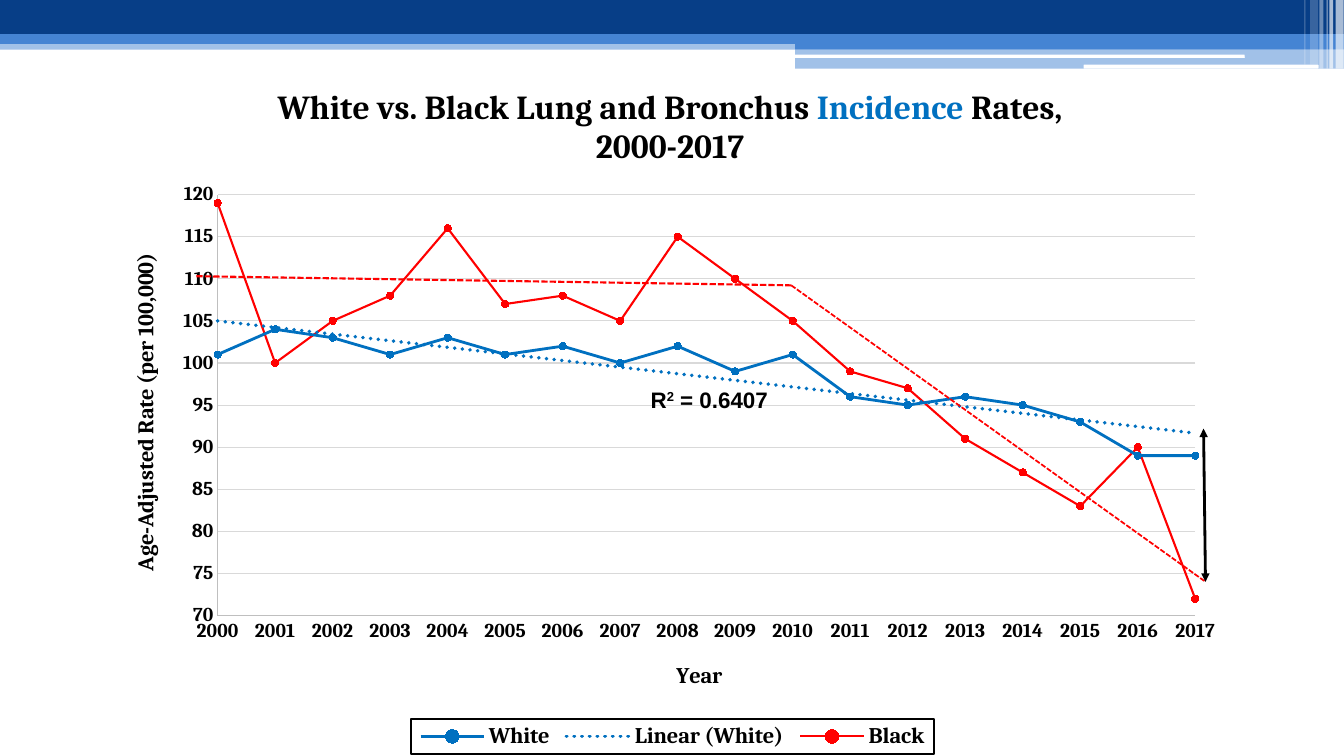
from dataclasses import dataclass

from lxml.etree import SubElement
from pptx import Presentation
from pptx.chart.data import XyChartData
from pptx.dml.color import RGBColor
from pptx.enum.chart import XL_CHART_TYPE, XL_LEGEND_POSITION, XL_MARKER_STYLE, XL_TICK_MARK
from pptx.enum.dml import MSO_LINE
from pptx.enum.shapes import MSO_CONNECTOR, MSO_SHAPE
from pptx.oxml import parse_xml
from pptx.oxml.ns import nsdecls, qn
from pptx.util import Cm, Pt


@dataclass(frozen=True)
class Theme:
    navy: RGBColor = RGBColor.from_string("073E87")
    band: RGBColor = RGBColor.from_string("4584D3")
    paper: RGBColor = RGBColor.from_string("FFFFFF")
    ink: RGBColor = RGBColor.from_string("000000")
    blue: RGBColor = RGBColor.from_string("0070C0")
    red: RGBColor = RGBColor.from_string("FF0000")
    axis: RGBColor = RGBColor.from_string("BFBFBF")
    grid: RGBColor = RGBColor.from_string("D9D9D9")
    font: str = "Cambria"
    label_font: str = "Arial"
    title: int = 24
    label: int = 16
    tick: int = 14


theme = Theme()


def style(font, size, color=theme.ink, name=theme.font):
    font.name, font.size, font.bold = name, Pt(size), True
    font.color.rgb = color


def place(el, after, **box):
    """Fix a chart part at fractions of the chart's size."""
    for old in el.findall(qn("c:layout")):
        el.remove(old)
    modes = "".join(f'<c:{k}Mode val="edge"/>' for k in "xy")
    if after is None:
        modes = '<c:layoutTarget val="inner"/>' + modes
    values = "".join(f'<c:{k} val="{v}"/>' for k, v in box.items())
    layout = parse_xml(f'<c:layout {nsdecls("c")}><c:manualLayout>{modes}{values}'
                       '</c:manualLayout></c:layout>')
    if after is None:
        el.insert(0, layout)
    else:
        el.find(qn(after)).addnext(layout)


prs = Presentation()
prs.slide_width, prs.slide_height = Cm(33.87), Cm(19.05)
s = prs.slides.add_slide(prs.slide_layouts[6])

# Header bands: left, top, width, height, colour, opacity in percent
RECT, ROUND = MSO_SHAPE.RECTANGLE, MSO_SHAPE.ROUNDED_RECTANGLE
bands = [
    (RECT, 0, 1.02, 33.87, 0.23, theme.band, 50),
    (RECT, 0, 0, 33.87, 0.86, theme.navy, 100),
    (RECT, 0, 0.86, 33.87, 0.25, theme.band, 100),
    (RECT, 20.04, 0.99, 13.83, 0.25, theme.band, 100),
    (RECT, 20.04, 1.22, 13.83, 0.51, theme.band, 50),
    (ROUND, 20.02, 1.38, 11.35, 0.08, theme.paper, 100),
    (ROUND, 27.31, 1.63, 5.92, 0.1, theme.paper, 100),
    (RECT, 33.66, 0, 0.2, 1.73, theme.paper, 65),
    (RECT, 33.5, 0, 0.1, 1.73, theme.paper, 65),
    (RECT, 33.43, 0, 0.03, 1.73, theme.paper, 60),
    (RECT, 33.25, 0, 0.1, 1.73, theme.paper, 40),
    (RECT, 33.02, 0, 0.2, 1.63, theme.paper, 20),
    (RECT, 32.87, 0, 0.03, 1.63, theme.paper, 30),
]
for kind, x, y, w, h, color, opacity in bands:
    sp = s.shapes.add_shape(kind, Cm(x), Cm(y), Cm(w), Cm(h))
    sp.shadow.inherit = False
    sp.line.fill.background()
    sp.fill.solid()
    sp.fill.fore_color.rgb = color
    if opacity < 100:
        clr = sp.element.spPr.find(".//" + qn("a:srgbClr"))
        SubElement(clr, qn("a:alpha")).set("val", str(opacity * 1000))

# Incidence chart
rates = {
    "White": [101, 104, 103, 101, 103, 101, 102, 100, 102, 99,
              101, 96, 95, 96, 95, 93, 89, 89],
    "Black": [119, 100, 105, 108, 116, 107, 108, 105, 115, 110,
              105, 99, 97, 91, 87, 83, 90, 72],
}
data = XyChartData()
for name, values in rates.items():
    points = data.add_series(name)
    for year, rate in enumerate(values, 2000):
        points.add_data_point(year, rate)
chart = s.shapes.add_chart(XL_CHART_TYPE.XY_SCATTER_LINES, Cm(2.62), Cm(1.6),
                           Cm(28.65), Cm(17.42), data).chart
chart.font.name = theme.font
plot_area = chart.element.find(".//" + qn("c:plotArea"))
place(plot_area, None, x=0.1, y=0.19, w=0.86, h=0.61)

# Series
for series, color, width in zip(chart.plots[0].series, (theme.blue, theme.red), (2, 1.5)):
    series.smooth = False
    series.format.line.color.rgb = color
    series.format.line.width = Pt(width)
    series.marker.style = XL_MARKER_STYLE.CIRCLE
    series.marker.size = 5
    series.marker.format.fill.solid()
    series.marker.format.fill.fore_color.rgb = color
    series.marker.format.line.color.rgb = color
chart.plots[0].vary_by_categories = False

# Linear trend of the first series
trend = parse_xml(
    f'<c:trendline {nsdecls("c", "a")}><c:spPr><a:ln w="{Pt(2.75)}" cap="rnd"><a:solidFill>'
    f'<a:srgbClr val="{theme.blue}"/></a:solidFill><a:prstDash val="sysDot"/></a:ln></c:spPr>'
    '<c:trendlineType val="linear"/><c:dispRSqr val="0"/><c:dispEq val="0"/></c:trendline>')
plot_area.find(".//" + qn("c:xVal")).addprevious(trend)

# Axes
axes = [
    (chart.category_axis, "Year", 2000, 2017, 1, {"x": 0.5, "y": 0.86}),
    (chart.value_axis, "Age-Adjusted Rate (per 100,000)", 70, 120, 5, {"x": 0.02, "y": 0.27}),
]
for axis, title, low, high, step, spot in axes:
    axis.minimum_scale, axis.maximum_scale, axis.major_unit = low, high, step
    axis.major_tick_mark = axis.minor_tick_mark = XL_TICK_MARK.NONE
    axis.format.line.color.rgb = theme.axis
    axis.format.line.width = Pt(0.75)
    axis.tick_labels.number_format = "General"
    axis.tick_labels.number_format_is_linked = False
    style(axis.tick_labels.font, theme.tick)
    tf = axis.axis_title.text_frame
    tf.text = title
    style(tf.paragraphs[0].runs[0].font, theme.label)
    place(axis.axis_title.element, "c:tx", **spot)
chart.value_axis.axis_title.element.find(".//" + qn("a:bodyPr")).set("rot", "-5400000")
chart.category_axis.has_major_gridlines = False
chart.value_axis.has_major_gridlines = True
grid = chart.value_axis.major_gridlines.format.line
grid.color.rgb, grid.width = theme.grid, Pt(0.75)

# Chart title
chart.has_title = True
tf = chart.chart_title.text_frame
lines = [
    [("White vs. Black Lung and Bronchus ", theme.ink), ("Incidence", theme.blue),
     (" Rates,", theme.ink)],
    [("2000-2017", theme.ink)],
]
for i, line in enumerate(lines):
    p = tf.add_paragraph() if i else tf.paragraphs[0]
    for text, color in line:
        r = p.add_run()
        r.text = text
        style(r.font, theme.title, color)
place(chart.chart_title.element, "c:tx", x=0.15, y=0.03)

# Legend
chart.has_legend = True
chart.legend.position = XL_LEGEND_POSITION.BOTTOM
chart.legend.include_in_layout = False
style(chart.legend.font, theme.label)
legend = chart.element.find(".//" + qn("c:legend"))
place(legend, "c:legendPos", x=0.27, y=0.95, w=0.46, h=0.05)
legend.find(qn("c:txPr")).addprevious(parse_xml(
    f'<c:spPr {nsdecls("c", "a")}><a:ln w="{Pt(1.5)}"><a:solidFill>'
    f'<a:srgbClr val="{theme.ink}"/></a:solidFill></a:ln></c:spPr>'))

# Two-part trend of the second series and the gap arrow
guides = [
    (4.95, 6.96, 19.94, 7.19, theme.red, 1.5, False),
    (19.94, 7.19, 30.38, 14.66, theme.red, 1.25, False),
    (30.33, 10.8, 30.38, 14.66, theme.ink, 2, True),
]
for x1, y1, x2, y2, color, width, is_arrow in guides:
    guide = s.shapes.add_connector(MSO_CONNECTOR.STRAIGHT, Cm(x1), Cm(y1), Cm(x2), Cm(y2))
    guide.line.color.rgb = color
    guide.line.width = Pt(width)
    if is_arrow:
        for end in ("a:headEnd", "a:tailEnd"):
            SubElement(guide.line._get_or_add_ln(), qn(end)).set("type", "triangle")
    else:
        guide.line.dash_style = MSO_LINE.SQUARE_DOT
    SubElement(guide.element.spPr, qn("a:effectLst"))

# Fit of the linear trend
tf = s.shapes.add_textbox(Cm(16.15), Cm(9.6), Cm(5.82), Cm(0.94)).text_frame
tf.word_wrap = True
p = tf.paragraphs[0]
for text in ("R", "2", " = 0.6407"):
    r = p.add_run()
    r.text = text
    style(r.font, theme.label, name=theme.label_font)
p.runs[1].font._element.set("baseline", "30000")

prs.save("out.pptx")
